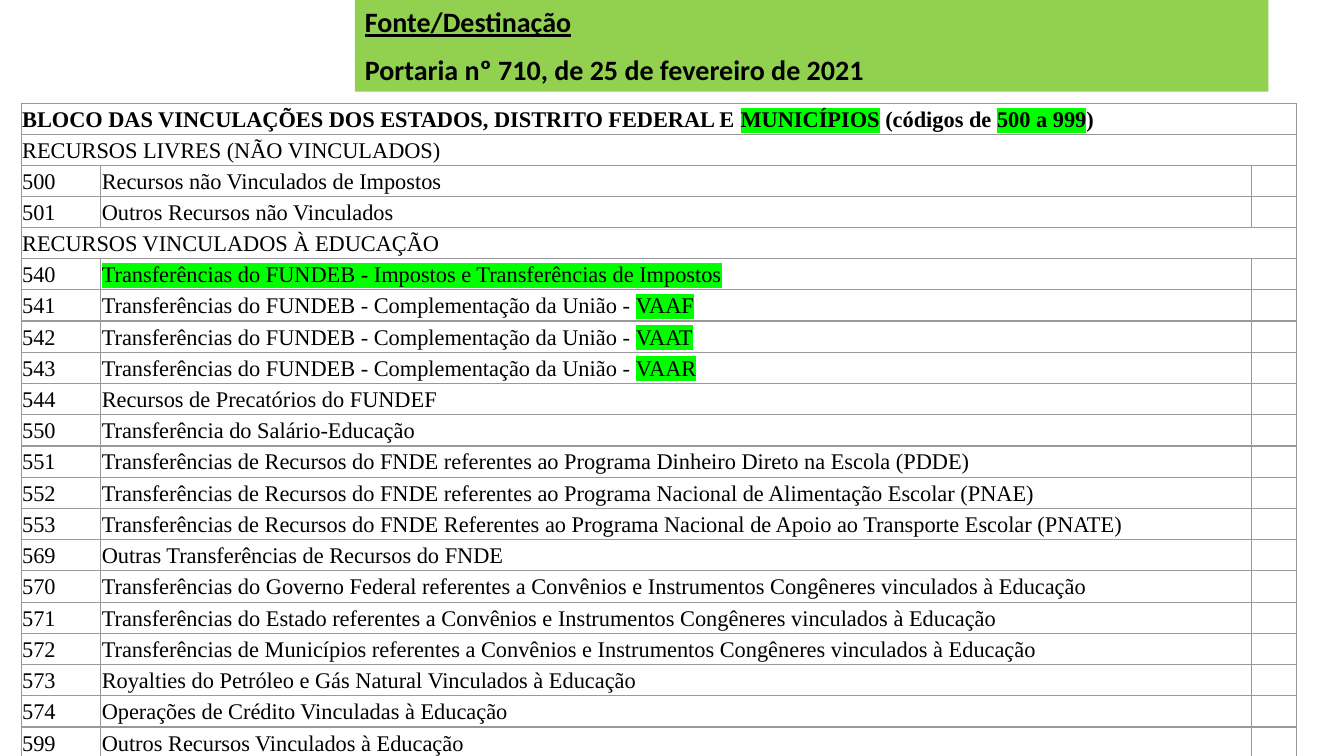
from dataclasses import dataclass

from lxml import etree
from pptx import Presentation
from pptx.dml.color import RGBColor
from pptx.enum import shapes, text
from pptx.oxml import ns
from pptx.util import Inches, Pt


@dataclass(frozen=True)
class Theme:
    banner: str = "92D050"
    ink: str = "000000"
    mark: str = "00FF00"
    border: str = "999999"
    title_font: str = "Calibri"
    table_font: str = "Times New Roman"
    title_size: int = 20
    table_size: int = 16


THEME = Theme()

# Text between bars is highlighted; a row without a code spans the table
FUNDEB = "Transferências do FUNDEB - "
FNDE = "Transferências de Recursos do FNDE "
AGREEMENTS = " referentes a Convênios e Instrumentos Congêneres vinculados à Educação"
ROWS = [
    ("", "BLOCO DAS VINCULAÇÕES DOS ESTADOS, DISTRITO FEDERAL E |MUNICÍPIOS| (códigos de |500 a 999|)"),
    ("", "RECURSOS LIVRES (NÃO VINCULADOS)"),
    ("500", "Recursos não Vinculados de Impostos"),
    ("501", "Outros Recursos não Vinculados"),
    ("", "RECURSOS VINCULADOS À EDUCAÇÃO"),
    ("540", f"|{FUNDEB}Impostos e Transferências de Impostos|"),
    ("541", FUNDEB + "Complementação da União - |VAAF|"),
    ("542", FUNDEB + "Complementação da União - |VAAT|"),
    ("543", FUNDEB + "Complementação da União - |VAAR|"),
    ("544", "Recursos de Precatórios do FUNDEF"),
    ("550", "Transferência do Salário-Educação"),
    ("551", FNDE + "referentes ao Programa Dinheiro Direto na Escola (PDDE)"),
    ("552", FNDE + "referentes ao Programa Nacional de Alimentação Escolar (PNAE)"),
    ("553", FNDE + "Referentes ao Programa Nacional de Apoio ao Transporte Escolar (PNATE)"),
    ("569", "Outras Transferências de Recursos do FNDE"),
    ("570", "Transferências do Governo Federal" + AGREEMENTS),
    ("571", "Transferências do Estado" + AGREEMENTS),
    ("572", "Transferências de Municípios" + AGREEMENTS),
    ("573", "Royalties do Petróleo e Gás Natural Vinculados à Educação"),
    ("574", "Operações de Crédito Vinculadas à Educação"),
    ("599", "Outros Recursos Vinculados à Educação"),
]


def add_color(parent, tag, color):
    node = etree.SubElement(parent, ns.qn(tag))
    etree.SubElement(node, ns.qn("a:srgbClr"), val=color)
    return node


def write(p, content, *, font, size, bold=False, underline=False, spacing=None, before=0):
    p.alignment = text.PP_ALIGN.LEFT
    p.space_before = Pt(before)
    if spacing:
        p.line_spacing = spacing
    for i, piece in enumerate(content.split("|")):
        if not piece:
            continue
        r = p.add_run()
        r.text = piece
        r.font.name, r.font.size = font, Pt(size)
        r.font.bold, r.font.underline = bold, underline
        r.font.color.rgb = RGBColor.from_string(THEME.ink)
        if i % 2:
            rpr = r._r.get_or_add_rPr()
            highlight = add_color(rpr, "a:highlight", THEME.mark)
            rpr.find(ns.qn("a:solidFill")).addnext(highlight)
    if not content:
        # Keep an empty cell as low as the written ones
        end = etree.SubElement(p._p, ns.qn("a:endParaRPr"), sz=str(size * 100))
        etree.SubElement(end, ns.qn("a:latin"), typeface=font)


def style_cell(cell):
    cell.vertical_anchor = text.MSO_ANCHOR.MIDDLE
    cell.margin_left = cell.margin_right = Inches(0.01)
    cell.margin_top = cell.margin_bottom = Inches(0.01)
    tcpr = cell._tc.get_or_add_tcPr()
    for side in ("a:lnL", "a:lnR", "a:lnT", "a:lnB"):
        line = etree.SubElement(tcpr, ns.qn(side), w=str(Pt(1)))
        add_color(line, "a:solidFill", THEME.border)
    cell.fill.background()


def add_banner(s, left, top, width, height):
    sp = s.shapes.add_shape(shapes.MSO_SHAPE.RECTANGLE, Inches(left), Inches(top),
                            Inches(width), Inches(height))
    sp.shadow.inherit = False
    sp.fill.solid()
    sp.fill.fore_color.rgb = RGBColor.from_string(THEME.banner)
    sp.line.fill.background()
    tf = sp.text_frame
    tf.word_wrap = True
    tf.auto_size = text.MSO_AUTO_SIZE.SHAPE_TO_FIT_TEXT
    tf.vertical_anchor = text.MSO_ANCHOR.TOP
    style = dict(font=THEME.title_font, size=THEME.title_size, bold=True)
    write(tf.paragraphs[0], "Fonte/Destinação", underline=True, **style)
    write(tf.add_paragraph(), "Portaria nº 710, de 25 de fevereiro de 2021", before=10, **style)


def add_sources_table(s, left, top, width, height):
    code_width, last_width = 0.79, 0.45
    widths = (code_width, width - code_width - last_width, last_width)
    table = s.shapes.add_table(len(ROWS), len(widths), Inches(left), Inches(top),
                               Inches(width), Inches(height)).table
    table.first_row = table.horz_banding = False
    for column, column_width in zip(table.columns, widths):
        column.width = Inches(column_width)

    for i, (code, name) in enumerate(ROWS):
        table.rows[i].height = Inches(0.31 if code else 0.3)
        cells = [table.cell(i, j) for j in range(len(widths))]
        if not code:
            cells[0].merge(cells[-1])
        for cell, content in zip(cells, (code, name, "") if code else (name, "", "")):
            style_cell(cell)
            write(cell.text_frame.paragraphs[0], content, font=THEME.table_font,
                  size=THEME.table_size, bold=i == 0, spacing=1.07)


def main():
    prs = Presentation()
    prs.slide_width, prs.slide_height = Inches(13.33), Inches(7.5)
    s = prs.slides.add_slide(prs.slide_layouts[6])
    add_banner(s, 3.52, 0, 9.06, 0.91)
    add_sources_table(s, 0.21, 1.03, 12.65, 6.47)
    prs.save("out.pptx")


if __name__ == "__main__":
    main()
